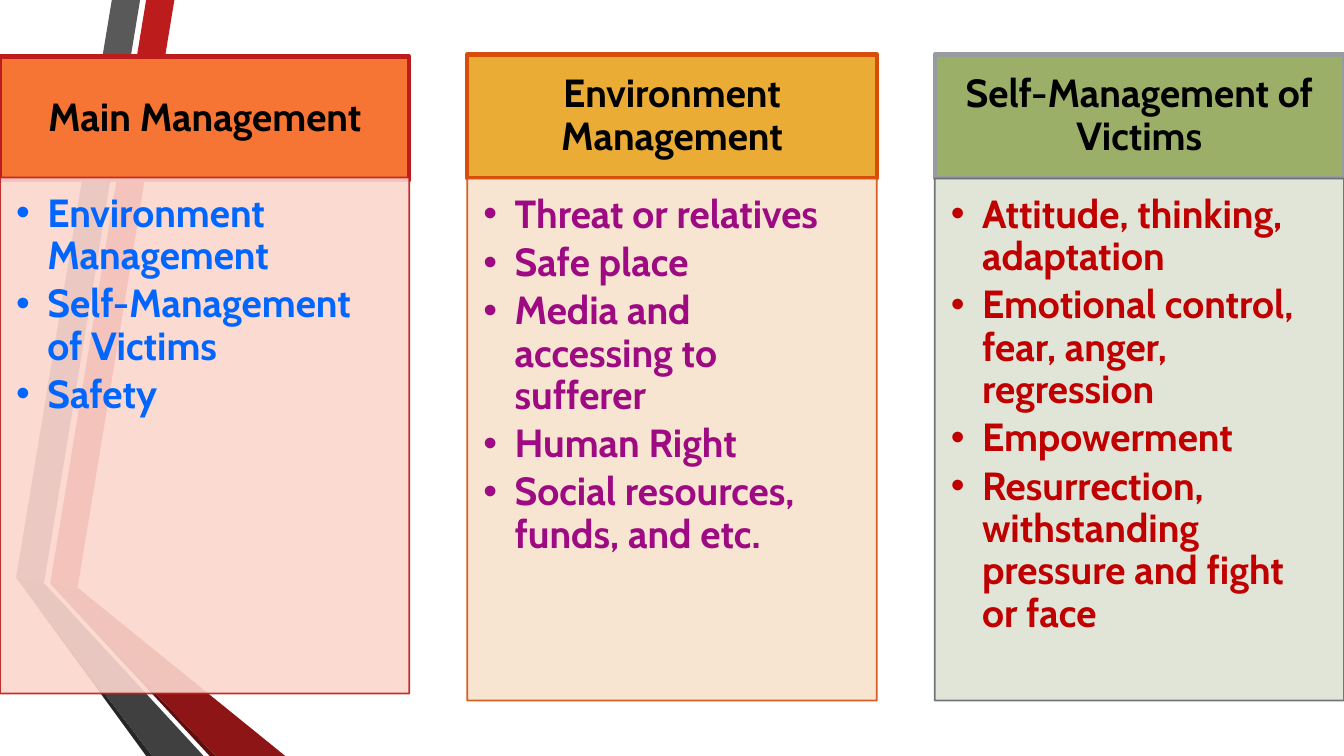
from lxml.etree import SubElement
from pptx import Presentation
from pptx.dml.color import RGBColor
from pptx.enum.text import MSO_ANCHOR as Anchor, MSO_AUTO_SIZE as AutoSize, PP_ALIGN as Align
from pptx.oxml.ns import qn
from pptx.util import Inches, Pt

SLIDE_W, SLIDE_H = 13.33, 7.5
COLUMN_W, HEADER_H = 4.06, 1.23
COLUMN_PITCH = (SLIDE_W - COLUMN_W) / 2
GRID = Inches(0.01)

RIBBONS = [
    ("BC1C1C", [(50, 578), (77, 583), (173, 0), (145, 0)]),
    ("595959", [(139, 0), (111, 0), (16, 573), (44, 577)]),
    ("262626", [(16, 573), (145, 750), (151, 750)]),
    ("5E0E0E", [(50, 579), (208, 750), (214, 750)]),
    ("8D1515", [(50, 579), (214, 750), (283, 750), (77, 583), (50, 578)]),
    ("404040", [(202, 750), (48, 583), (43, 578), (44, 577), (16, 573), (151, 750)]),
]

COLUMNS = [
    dict(top=0.56, bottom=6.88, overlap=0.03, header_slot=0, list_slot=None,
         header="Main Management", header_fill="F67534", header_edge="BC1C1C",
         list_fill="FBD6CE", list_edge="BC1C1C", list_text="0066FF",
         items=["Environment Management", "Self-Management of Victims", "Safety"]),
    dict(top=0.54, bottom=6.95, overlap=0, header_slot=1, list_slot=2,
         header="Environment Management", header_fill="EAAC35", header_edge="D64E09",
         list_fill="F7E3CE", list_edge="D64E09", list_text="9E0A82",
         items=["Threat or relatives", "Safe place", "Media and accessing to sufferer",
                "Human Right", "Social resources, funds, and etc."]),
    dict(top=0.54, bottom=6.95, overlap=0, header_slot=3, list_slot=4,
         header="Self-Management of Victims", header_fill="9BAF68", header_edge="979D9F",
         list_fill="DEE3D4", list_edge="636A6C", list_text="C00000",
         items=["Attitude, thinking, adaptation",
                "Emotional control, fear, anger, regression", "Empowerment",
                "Resurrection, withstanding pressure and fight or face"]),
]

HEADER_FRAME = dict(vertical_anchor=Anchor.MIDDLE, margin_left=Inches(0.22),
                    margin_top=Inches(0.12), margin_right=Inches(0.22),
                    margin_bottom=Inches(0.12))
LIST_FRAME = dict(vertical_anchor=Anchor.TOP, margin_left=Inches(0.16),
                  margin_top=Inches(0.16), margin_right=Inches(0.22),
                  margin_bottom=Inches(0.24))
HEADER_PARAGRAPH = dict(alignment=Align.CENTER, space_after=Pt(0))
LIST_PARAGRAPH = dict(alignment=Align.LEFT, space_after=Pt(4.2))


def apply(target, formats):
    """Set each attribute in formats on target."""
    for name, value in formats.items():
        setattr(target, name, value)


def paint(fill, color, alpha=100):
    """Give a fill a solid hex colour with an opacity in percent."""
    fill.solid()
    fill.fore_color.rgb = RGBColor.from_string(color)
    if alpha < 100:
        color_node = fill._xPr.find(qn("a:solidFill"))[0]
        SubElement(color_node, qn("a:alpha"), val=str(alpha * 1000))


def add_bullet(paragraph):
    """Give a paragraph a hanging round bullet."""
    properties = paragraph._p.get_or_add_pPr()
    properties.set("marL", str(Inches(0.31)))
    properties.set("indent", str(-Inches(0.31)))
    SubElement(properties, qn("a:buFont"), typeface="Arial")
    SubElement(properties, qn("a:buChar"), char="•")


def draw_ribbons(slide):
    """Draw the folded ribbons behind the columns."""
    for color, points in RIBBONS:
        builder = slide.shapes.build_freeform(*points[0], scale=GRID)
        builder.add_line_segments(points[1:], close=True)
        ribbon = builder.convert_to_shape()
        ribbon.shadow.inherit = False
        paint(ribbon.fill, color)
        ribbon.line.fill.background()


def draw_panel(slide, slot, box, lines, fill, edge, edge_width, text_color,
               frame_formats, paragraph_formats, alpha=100, bulleted=False):
    """Fill one panel with text, in a layout placeholder where a slot is given."""
    lengths = [Inches(length) for length in box]
    if slot is None:
        panel = slide.shapes.add_textbox(*lengths)
    else:
        panel = next(p for p in slide.placeholders if p.placeholder_format.idx == slot)
        slide.shapes._spTree.append(panel._element)
    apply(panel, dict(zip(("left", "top", "width", "height"), lengths)))
    paint(panel.fill, fill, alpha)
    paint(panel.line.fill, edge, alpha)
    panel.line.width = Pt(edge_width)
    frame = panel.text_frame
    apply(frame, dict(frame_formats, word_wrap=True, auto_size=AutoSize.NONE))
    for number, line in enumerate(lines):
        paragraph = frame.add_paragraph() if number else frame.paragraphs[0]
        if bulleted:
            add_bullet(paragraph)
        apply(paragraph, dict(paragraph_formats, line_spacing=0.9, space_before=Pt(0)))
        run = paragraph.add_run()
        run.text = line
        apply(run.font, dict(name="Cabin", size=Pt(28), bold=True))
        paint(run.font.fill, text_color)


def draw_column(slide, left, column):
    """Place a header and its bulleted list in one column."""
    top = column["top"]
    list_top = top + HEADER_H - column["overlap"]
    draw_panel(slide, column["header_slot"], (left, top, COLUMN_W, HEADER_H),
               [column["header"]], column["header_fill"], column["header_edge"], 3,
               "000000", HEADER_FRAME, HEADER_PARAGRAPH)
    draw_panel(slide, column["list_slot"],
               (left, list_top, COLUMN_W, column["bottom"] - list_top),
               column["items"], column["list_fill"], column["list_edge"], 1.25,
               column["list_text"], LIST_FRAME, LIST_PARAGRAPH, alpha=90, bulleted=True)


def main():
    """Build the management slide and save it."""
    deck = Presentation()
    apply(deck, dict(slide_width=Inches(SLIDE_W), slide_height=Inches(SLIDE_H)))
    slide = deck.slides.add_slide(deck.slide_layouts.get_by_name("Comparison"))
    paint(slide.background.fill, "FFFFFF")
    draw_ribbons(slide)
    for number, column in enumerate(COLUMNS):
        draw_column(slide, number * COLUMN_PITCH, column)
    deck.save("out.pptx")


if __name__ == "__main__":
    main()
